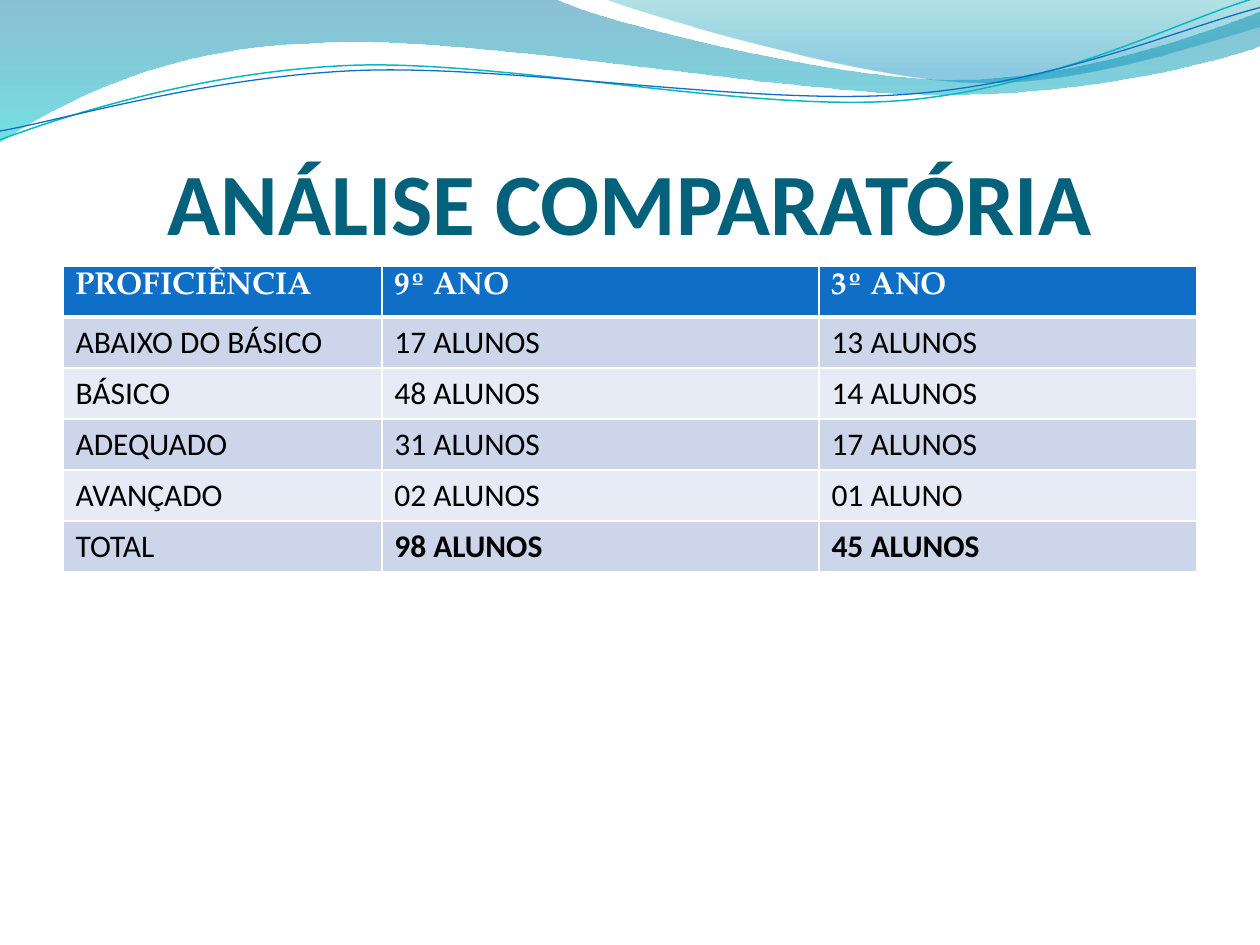
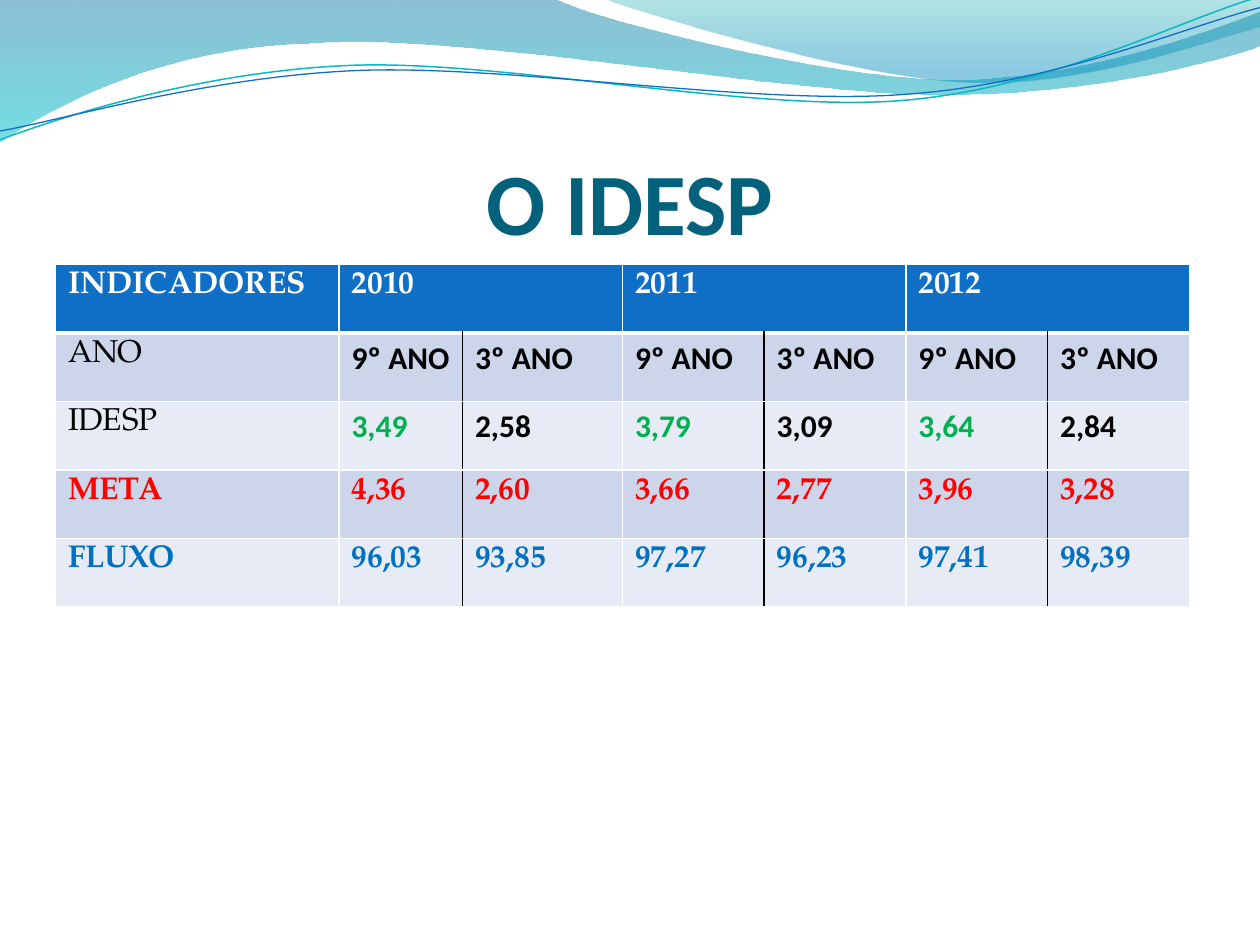
from math import cos, radians, sin

from lxml import etree
from pptx import Presentation
from pptx.dml.color import RGBColor
from pptx.enum.text import MSO_ANCHOR, PP_ALIGN
from pptx.oxml.ns import qn
from pptx.util import Inches, Pt

BOTTOM = MSO_ANCHOR.BOTTOM
CENTER = PP_ALIGN.CENTER

WHITE = RGBColor(0xFF, 0xFF, 0xFF)
BLACK = RGBColor(0x00, 0x00, 0x00)
BLUE = RGBColor(0x0F, 0x6F, 0xC6)
TEAL = RGBColor(0x0A, 0xB8, 0xBF)
NAVY = RGBColor(0x04, 0x61, 0x7B)
DARK = RGBColor(0xCC, 0xD5, 0xEA)
LIGHT = RGBColor(0xE7, 0xEB, 0xF5)
GREEN = RGBColor(0x00, 0xB0, 0x50)
RED = RGBColor(0xFF, 0x00, 0x00)
SKY = RGBColor(0x00, 0x70, 0xC0)
SEA = RGBColor(0x00, 0x74, 0xA1)
AQUA = RGBColor(0x00, 0xC6, 0xCF)
MINT = RGBColor(0x00, 0xA1, 0xA9)
LAKE = RGBColor(0x00, 0x8B, 0xBF)

# Text looks: font values and colour
SANS, SERIF = "Calibri", "TeX Gyre Pagella"
HEAD = {"name": SERIF, "size": Pt(18), "bold": True, "rgb": WHITE}
TITLE = {"name": SANS, "size": Pt(50), "bold": True, "rgb": NAVY}
PLAIN = {"name": SANS, "size": Pt(18), "bold": False, "rgb": BLACK}
STRONG = {**PLAIN, "bold": True}
GOOD = {**STRONG, "rgb": GREEN}
LABEL = {**PLAIN, "name": SERIF}
GOAL = {**HEAD, "rgb": RED}
FLOW = {**HEAD, "rgb": SKY}

# Waves: a box, a start, then points (2 numbers) or Bezier curves (6 numbers)
# Bands have two gradient stops: place, colour, opacity in percent
BANDS = [
    ((-0.01, -0.01, 10.02, 1.14),
     [(0, 0), (4.4, -0.01), (4.76, 0.17, 6.64, 0.63, 7.58, 0.63),
      (8.53, 0.63, 9.58, 0.26, 10, 0.09), (10.01, 0.36),
      (9.83, 0.44, 8.7, 0.76, 7.46, 0.75),
      (6.22, 0.75, 3.82, 0.28, 2.57, 0.34),
      (1.29, 0.36, 0.46, 0.83, -0.01, 1.13), (0, 0)],
     [(0, SEA, 45), (1, AQUA, 55)]),
    ((4.79, -0.01, 5.21, 0.7),
     [(4.79, -0.01), (5.09, 0.11, 6.82, 0.62, 7.69, 0.65),
      (8.56, 0.69, 9.61, 0.32, 10, 0.21), (10, 0), (4.79, -0.01)],
     [(0, MINT, 30), (0.8, LAKE, 45)]),
]
LINES = [
    ((-0.02, 0.22, 10.02, 0.71),
     [(0, 1.11), (0.48, 0.93, 1.58, 0.57, 2.77, 0.52),
      (3.95, 0.47, 5.93, 0.89, 7.13, 0.8),
      (8.33, 0.71, 9.38, 0.15, 9.98, -0.02)], TEAL, 0.85),
    ((-0.02, 0.3, 10.03, 0.58),
     [(0, 1.04), (0.47, 0.96, 1.64, 0.61, 2.83, 0.56),
      (4.03, 0.51, 5.97, 0.84, 7.17, 0.75),
      (8.36, 0.67, 9.41, 0.21, 10, 0.06)], BLUE, 0.75),
]
TILT = -2.7

# Each row: texts, then looks of the label, odd and even columns
LEVELS = [
    (["PROFICIÊNCIA", "9º ANO", "3º ANO"], (HEAD, HEAD, HEAD)),
    (["ABAIXO DO BÁSICO", "17 ALUNOS", "13 ALUNOS"], (PLAIN, PLAIN, PLAIN)),
    (["BÁSICO", "48 ALUNOS", "14 ALUNOS"], (PLAIN, PLAIN, PLAIN)),
    (["ADEQUADO", "31 ALUNOS", "17 ALUNOS"], (PLAIN, PLAIN, PLAIN)),
    (["AVANÇADO", "02 ALUNOS", "01 ALUNO"], (PLAIN, PLAIN, PLAIN)),
    (["TOTAL", "98 ALUNOS", "45 ALUNOS"], (PLAIN, STRONG, STRONG)),
]
SCORES = [
    (["INDICADORES", "2010", "", "2011", "", "2012", ""], (HEAD, HEAD, HEAD)),
    (["ANO"] + ["9º ANO", "3º ANO"] * 3, (LABEL, STRONG, STRONG)),
    (["IDESP", "3,49", "2,58", "3,79", "3,09", "3,64", "2,84"],
     (LABEL, GOOD, STRONG)),
    (["META", "4,36", "2,60", "3,66", "2,77", "3,96", "3,28"],
     (GOAL, GOAL, GOAL)),
    (["FLUXO", "96,03", "93,85", "97,27", "96,23", "97,41", "98,39"],
     (FLOW, FLOW, FLOW)),
]
# Title, table place, height, column widths, rows, paired columns
SLIDES = [
    ("ANÁLISE COMPARATÓRIA", 0.5, 2.11, 2.43, [2.53, 3.47, 3], LEVELS, False),
    ("O IDESP", 0.44, 2.1, 2.72, [2.25, 0.98, 1.27] + [4.5 / 4] * 4,
     SCORES, True),
]


def write(para, text, look):
    run = para.add_run()
    run.text = text
    for key, value in look.items():
        if key == "rgb":
            run.font.color.rgb = value
        else:
            setattr(run.font, key, value)


def wave(slide, box, nodes, tilt=0):
    left, top, wide, high = box
    pen = slide.shapes.build_freeform(Inches(left), Inches(top))
    pen.add_line_segments([(Inches(left + wide), Inches(top + high))],
                          close=False)
    shape = pen.convert_to_shape()
    shape.shadow.inherit = False
    shape.rotation = tilt

    # Turn the points back, so that the tilted shape lands on them
    turn = radians(-tilt)
    route = next(shape._element.spPr.iter(qn("a:path")))
    del route[:]
    for i, node in enumerate(nodes):
        tag = "a:moveTo" if i == 0 else "a:lnTo"
        if len(node) == 6:
            tag = "a:cubicBezTo"
        move = etree.SubElement(route, qn(tag))
        for x, y in zip(node[::2], node[1::2]):
            dx, dy = x - left - wide / 2, y - top - high / 2
            px = wide / 2 + dx * cos(turn) - dy * sin(turn)
            py = high / 2 + dx * sin(turn) + dy * cos(turn)
            etree.SubElement(move, qn("a:pt"), x=str(Inches(px)),
                             y=str(Inches(py)))
    if nodes[0] == nodes[-1]:
        etree.SubElement(route, qn("a:close"))
    return shape


deck = Presentation()
deck.slide_width, deck.slide_height = Inches(10), Inches(7.5)

for title, left, top, high, widths, rows, paired in SLIDES:
    slide = deck.slides.add_slide(deck.slide_layouts[6])

    # Wave bands and thin lines
    for box, nodes, stops in BANDS:
        band = wave(slide, box, nodes)
        band.line.fill.background()
        band.fill.gradient()
        band.fill.gradient_angle = 270
        for stop, (place, color, _) in zip(band.fill.gradient_stops, stops):
            stop.position = place
            stop.color.rgb = color
        tints = band._element.spPr.iter(qn("a:srgbClr"))
        for tint, (_, _, solid) in zip(tints, stops):
            etree.SubElement(tint, qn("a:alpha"), val=str(solid * 1000))
    for box, nodes, color, width in LINES:
        line = wave(slide, box, nodes, TILT)
        line.fill.background()
        line.line.color.rgb = color
        line.line.width = Pt(width)

    # Title
    area = slide.shapes.add_textbox(Inches(0.5), Inches(0.76),
                                    Inches(9), Inches(1.25))
    frame = area.text_frame
    setup = {"word_wrap": True, "vertical_anchor": BOTTOM, "margin_left": 0,
             "margin_top": Inches(0.05), "margin_right": 0, "margin_bottom": 0}
    for key, value in setup.items():
        setattr(frame, key, value)
    frame.paragraphs[0].alignment = CENTER
    write(frame.paragraphs[0], title, TITLE)

    # Table
    table = slide.shapes.add_table(len(rows), len(widths), Inches(left),
                                   Inches(top), Inches(9), Inches(high)).table
    for column, width in zip(table.columns, widths):
        column.width = Inches(width)
    for r, (texts, looks) in enumerate(rows):
        table.rows[r].height = Inches(high / len(rows))
        for c, text in enumerate(texts):
            cell = table.cell(r, c)
            kind = 0 if c == 0 else 2 - c % 2

            # Borders: thick under the header, black inside each pair
            inner = paired and r > 0
            edges = {
                "L": (BLACK if inner and kind == 2 else WHITE, 1),
                "R": (BLACK if inner and kind == 1 else WHITE, 1),
                "T": (WHITE, 3 if r == 1 else 1),
                "B": (WHITE, 3 if r == 0 else 1),
            }
            props = cell._tc.get_or_add_tcPr()
            for side, (color, width) in edges.items():
                edge = etree.SubElement(props, qn("a:ln" + side),
                                        w=str(Pt(width)))
                fill = etree.SubElement(edge, qn("a:solidFill"))
                etree.SubElement(fill, qn("a:srgbClr"), val=str(color))

            cell.fill.solid()
            cell.fill.fore_color.rgb = BLUE if r == 0 else (LIGHT, DARK)[r % 2]
            if text:
                write(cell.text_frame.paragraphs[0], text, looks[kind])
    if paired:
        for c in range(1, len(widths), 2):
            table.cell(0, c).merge(table.cell(0, c + 1))

deck.save("out.pptx")
